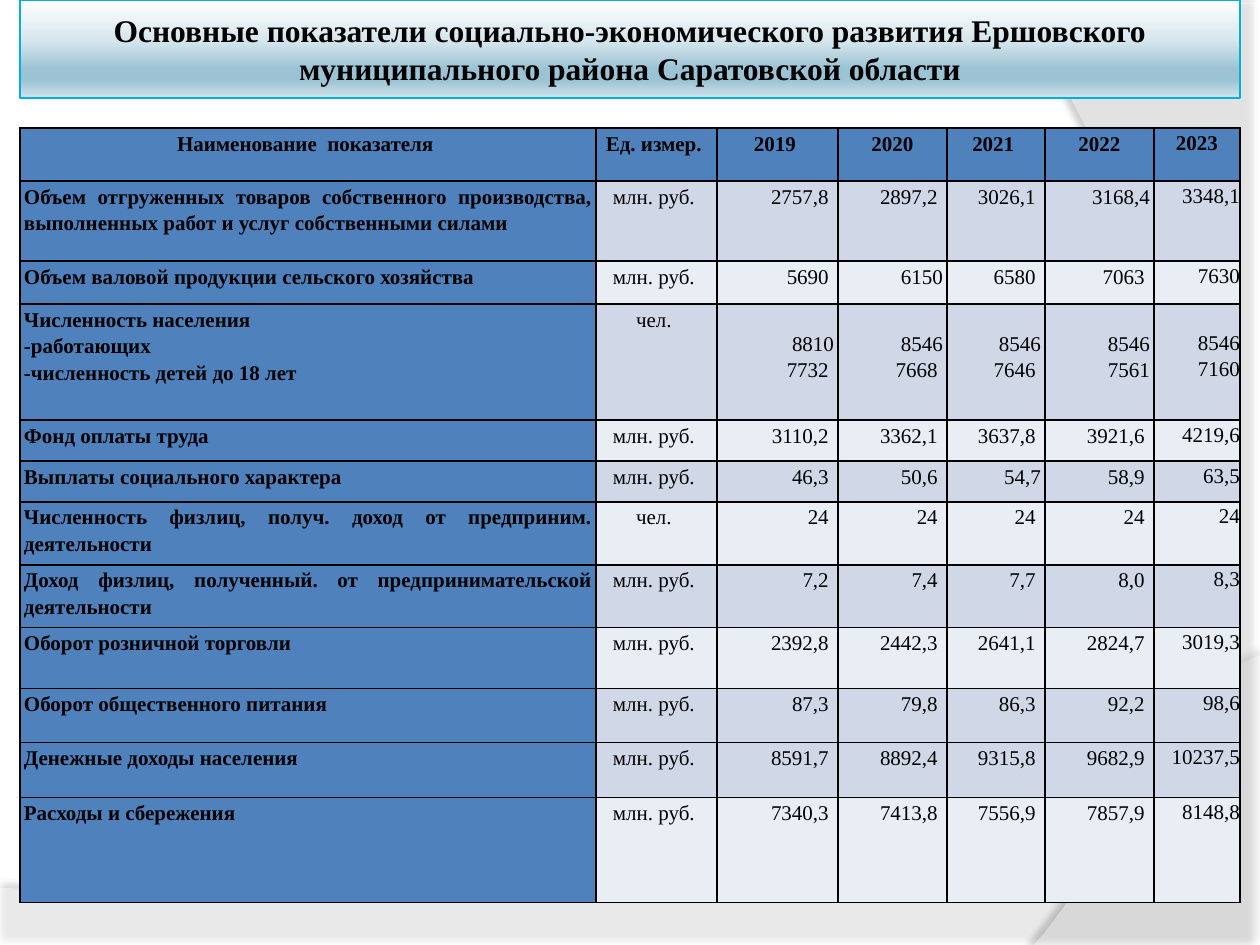
from lxml.etree import SubElement
from pptx import Presentation
from pptx.dml.color import RGBColor
from pptx.enum.shapes import MSO_SHAPE as SHAPE
from pptx.enum.text import MSO_ANCHOR as ANCHOR, PP_ALIGN as ALIGN
from pptx.oxml.ns import qn
from pptx.util import Pt

PX = 914400 // 126
FONT = "Times New Roman"
COLORS = {"ink": "000000", "white": "FFFFFF", "head": "4F81BD",
          "dark": "D0D8E8", "light": "E9EDF4", "edge": "00B0E0"}

TITLE = ("Основные показатели социально-экономического развития Ершовского "
         "муниципального района Саратовской области")
TITLE_STOPS = [(0, "FFFFFF"), (42, "D5E6EC"), (70, "9CC3D4"), (82, "9CC3D4"), (100, "D0E3EA")]

COLUMNS = [576, 121, 121, 109, 98, 109, 86]
HEADER = ["Наименование  показателя ", "Ед. измер. ", "2019 ", "2020", "2021 ", "2022", "2023"]
HEADER_HEIGHT = 53
MLN, PERSONS = "млн. руб. ", "чел. "

# height, band, indicator, unit, values for 2019 to 2023
ROWS = [
    (80, "dark", "Объем отгруженных товаров собственного производства, "
     "выполненных работ и услуг собственными силами ", MLN,
     ["2757,8 ", "2897,2 ", "3026,1 ", "3168,4", "3348,1"]),
    (43, "light", "Объем валовой продукции сельского хозяйства ", MLN,
     ["5690 ", "6150", "6580 ", "7063 ", "7630"]),
    (116, "dark", "Численность населения\n-работающих\n-численность детей до 18 лет ", PERSONS,
     ["8810\n7732 ", "8546\n7668 ", "8546\n7646 ", "8546\n7561", "8546\n7160"]),
    (41, "light", "Фонд оплаты труда ", MLN,
     ["3110,2 ", "3362,1 ", "3637,8 ", "3921,6 ", "4219,6"]),
    (41, "dark", "Выплаты социального характера ", MLN,
     ["46,3 ", "50,6 ", "54,7", "58,9 ", "63,5"]),
    (63, "light", "Численность физлиц, получ. доход от предприним. деятельности ", PERSONS,
     ["24 ", "24 ", "24 ", "24 ", "24"]),
    (63, "dark", "Доход физлиц, полученный. от предпринимательской деятельности ", MLN,
     ["7,2 ", "7,4 ", "7,7 ", "8,0 ", "8,3"]),
    (61, "light", "Оборот розничной торговли ", MLN,
     ["2392,8 ", "2442,3 ", "2641,1 ", "2824,7 ", "3019,3"]),
    (54, "dark", "Оборот общественного питания ", MLN,
     ["87,3 ", "79,8 ", "86,3 ", "92,2 ", "98,6"]),
    (55, "dark", "Денежные доходы населения ", MLN,
     ["8591,7 ", "8892,4 ", "9315,8 ", "9682,9 ", "10237,5"]),
    (105, "light", "Расходы и сбережения ", MLN,
     ["7340,3 ", "7413,8 ", "7556,9 ", "7857,9 ", "8148,8"]),
]

# corner points, Bezier control points, fill opacity, shadow: opacity, distance pt, angle
WAVES = [
    ([(0, 888), (0, 945), (1260, 945)],
     [(1260, 655), (704, 919), (493, 906), (0, 888)], 45, (35, 3.5, 270)),
    ([(1008, 0), (1260, 2), (1260, 945)],
     [(1034, 945), (1178, 780), (1283, 378), (1008, 0)], 40, (45, 4, 180)),
]


def rgb(name):
    return RGBColor.from_string(COLORS[name])


def px(n):
    return n * PX


def write(tf, text, size=12, bold=False, align=ALIGN.LEFT, spacing=None):
    tf.word_wrap = True
    for i, line in enumerate(text.split("\n")):
        p = tf.add_paragraph() if i else tf.paragraphs[0]
        p.alignment = align
        if spacing:
            p.line_spacing = spacing
        r = p.add_run()
        r.text = line
        r.font.name, r.font.size, r.font.bold = FONT, Pt(size), bold
        r.font.color.rgb = rgb("ink")


def add_color(parent, value, opacity=None):
    color = SubElement(parent, qn("a:srgbClr"), val=value)
    if opacity is not None:
        SubElement(color, qn("a:alpha"), val=str(opacity * 1000))


def bezier(points, steps=40):
    a, b, c, d = points
    for i in range(steps + 1):
        t = i / steps
        u = 1 - t
        yield tuple(round(u**3 * a[k] + 3 * u * u * t * b[k] + 3 * u * t * t * c[k] + t**3 * d[k], 2)
                    for k in (0, 1))


def add_wave(slide, corners, curve, opacity, shadow):
    builder = slide.shapes.build_freeform(*corners[0], scale=PX)
    builder.add_line_segments([*corners[1:], *bezier(curve)], close=True)
    sp = builder.convert_to_shape()
    sp.line.fill.background()
    sp.shadow.inherit = False
    sp.fill.solid()
    sp.fill.fore_color.rgb = rgb("white")
    color = sp._element.spPr.find(".//" + qn("a:srgbClr"))
    SubElement(color, qn("a:alpha"), val=str(opacity * 1000))
    strength, distance, angle = shadow
    effects = sp._element.spPr.find(qn("a:effectLst"))
    outer = SubElement(effects, qn("a:outerShdw"), blurRad=str(Pt(4)), dist=str(Pt(distance)),
                       dir=str(angle * 60000), algn="ctr", rotWithShape="0")
    add_color(outer, COLORS["ink"], strength)


def add_title(slide):
    sp = slide.shapes.add_shape(SHAPE.RECTANGLE, px(20), 0, px(1220), px(98))
    sp.shadow.inherit = False
    sp.line.color.rgb = rgb("edge")
    sp.line.width = Pt(0.75)
    sp.fill.gradient()
    gradient = sp._element.spPr.find(qn("a:gradFill"))
    for child in list(gradient):
        gradient.remove(child)
    stops = SubElement(gradient, qn("a:gsLst"))
    for position, color in TITLE_STOPS:
        add_color(SubElement(stops, qn("a:gs"), pos=str(position * 1000)), color)
    SubElement(gradient, qn("a:lin"), ang="5400000", scaled="0")
    tf = sp.text_frame
    tf.margin_left = tf.margin_right = tf.margin_top = tf.margin_bottom = px(6)
    tf.vertical_anchor = ANCHOR.MIDDLE
    write(tf, TITLE, size=18, bold=True, align=ALIGN.CENTER)


def add_borders(cell):
    tc_pr = cell._tc.get_or_add_tcPr()
    for i, side in enumerate(("lnL", "lnR", "lnT", "lnB")):
        line = SubElement(tc_pr, qn("a:" + side), w=str(Pt(1)))
        add_color(SubElement(line, qn("a:solidFill")), COLORS["ink"])
        tc_pr.insert(i, line)


def fill_cell(cell, text, fill, align, bold, last, top=0):
    side = 0 if last else 4
    cell.margin_left = cell.margin_right = px(side)
    cell.margin_top = px(top + (0 if last else 1))
    cell.margin_bottom = 0
    add_borders(cell)
    cell.fill.solid()
    cell.fill.fore_color.rgb = rgb(fill)
    write(cell.text_frame, text, bold=bold, align=align, spacing=1.15)


def add_indicators(slide):
    heights = [HEADER_HEIGHT] + [row[0] for row in ROWS]
    frame = slide.shapes.add_table(len(heights), len(COLUMNS), px(20), px(128),
                                   px(sum(COLUMNS)), px(sum(heights)))
    table = frame.table
    table.first_row = table.horz_banding = False
    for column, width in zip(table.columns, COLUMNS):
        column.width = px(width)
    for row, height in zip(table.rows, heights):
        row.height = px(height)

    last = len(COLUMNS) - 1
    for c, text in enumerate(HEADER):
        fill_cell(table.cell(0, c), text, "head", ALIGN.CENTER, True, c == last)
    for r, (_, band, name, unit, values) in enumerate(ROWS, 1):
        fill_cell(table.cell(r, 0), name, "head", ALIGN.JUSTIFY, True, False)
        fill_cell(table.cell(r, 1), unit, band, ALIGN.CENTER, False, False)
        for c, value in enumerate(values, 2):
            # paired values start beside the second line of the indicator
            top = 24 if "\n" in value else 0
            fill_cell(table.cell(r, c), value, band, ALIGN.RIGHT, False, c == last, top)


def main():
    prs = Presentation()
    prs.slide_width, prs.slide_height = px(1260), px(945)
    slide = prs.slides.add_slide(prs.slide_layouts[6])
    for wave in WAVES:
        add_wave(slide, *wave)
    add_title(slide)
    add_indicators(slide)
    prs.save("out.pptx")


if __name__ == "__main__":
    main()
